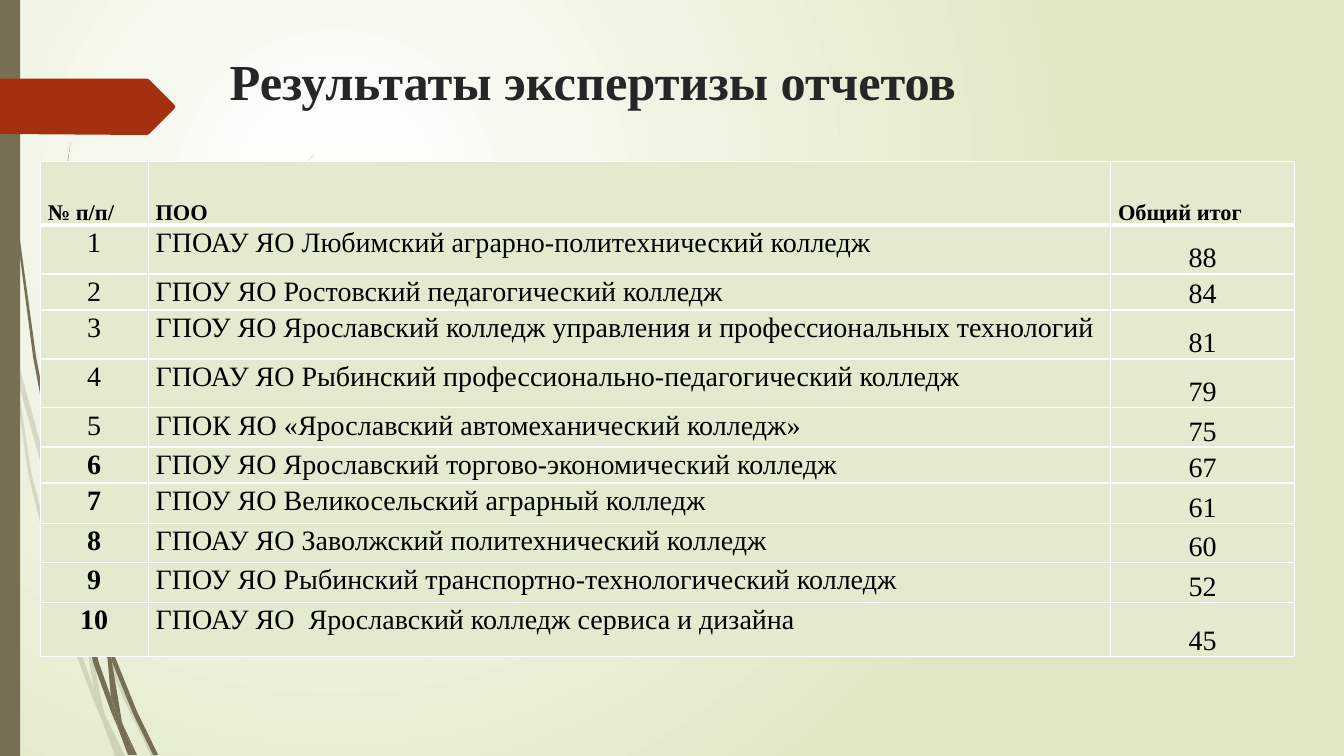
"""Build the slide with the results table of the report review."""
from dataclasses import dataclass
from typing import Optional

from lxml.etree import SubElement
from pptx import Presentation
from pptx.dml.color import RGBColor
from pptx.enum.shapes import MSO_SHAPE
from pptx.enum.text import MSO_ANCHOR, PP_ALIGN
from pptx.oxml.ns import qn
from pptx.util import Pt

FONT = "Times New Roman"
OLIVE = "766F54"
RED = "A53010"
WHITE = "FFFFFF"
BLACK = "000000"
TITLE_GREY = "262626"
PALE_GREEN = "DFE8C4"
CELL_GREEN = "E3EACF"
GRID = 0.72
FAINT = 20


@dataclass(frozen=True)
class Outline:
    points: tuple
    color: str = OLIVE
    opacity: Optional[int] = None


@dataclass(frozen=True)
class Result:
    number: str
    college: str
    total: str
    height: float


@dataclass(frozen=True)
class CellStyle:
    size: float
    bold: bool
    align: PP_ALIGN
    anchor: MSO_ANCHOR


FAINT_BLADES = (
    ((11, 350), (9, 322), (0, 282), (0, 299), (10, 344)),
    ((58, 522), (84, 599), (85, 586), (62, 520), (14, 345), (17, 376)),
    ((92, 607), (88, 596), (88, 610), (123, 694), (150, 750), (155, 750), (127, 692)),
    ((119, 750), (124, 750), (105, 711)),
    ((93, 683), (70, 619), (31, 469), (17, 376), (11, 350), (28, 470), (65, 621),
     (92, 693), (101, 714), (99, 707)),
    ((84, 599), (87, 646), (93, 683), (96, 692), (105, 711), (103, 706), (91, 646),
     (88, 610), (88, 608)),
    ((88, 584), (110, 462), (160, 349), (229, 245), (268, 198), (290, 175), (312, 154),
     (312, 153), (289, 175), (268, 197), (228, 244), (158, 348), (107, 461), (85, 584),
     (85, 586), (88, 596)),
    ((101, 714), (114, 750), (119, 750)),
    ((88, 608), (88, 610), (88, 596), (85, 586), (84, 599)),
    ((96, 692), (93, 683), (99, 707), (101, 714), (119, 750), (105, 711)),
)
SOLID_BLADES = (
    ((7, 110), (17, 233), (33, 355), (56, 477), (57, 481), (55, 457), (55, 453),
     (36, 355), (19, 232), (8, 109), (5, 48), (4, 0), (3, 0), (4, 48)),
    ((88, 592), (106, 645), (106, 633), (106, 631), (93, 590), (60, 472), (64, 505)),
    ((113, 649), (110, 641), (111, 656), (132, 708), (152, 749), (157, 749), (136, 706)),
    ((110, 691), (98, 657), (72, 556), (64, 505), (57, 477), (68, 557), (93, 659),
     (111, 708), (117, 722), (116, 717)),
    ((60, 472), (58, 453), (54, 349), (58, 245), (63, 193), (70, 141), (62, 193),
     (56, 245), (52, 349), (55, 449)),
    ((133, 749), (136, 749), (122, 719)),
    ((57, 477), (64, 505), (60, 472), (55, 449), (55, 453)),
    ((111, 633), (125, 552), (158, 476), (205, 406), (231, 374), (245, 359), (261, 344),
     (260, 344), (245, 358), (231, 373), (204, 405), (156, 474), (122, 551), (106, 631),
     (110, 641)),
    ((117, 722), (127, 749), (131, 749)),
    ((106, 645), (110, 691), (116, 706), (122, 719), (121, 716), (111, 656), (109, 651)),
    ((106, 645), (109, 651), (111, 656), (110, 641), (106, 631), (106, 633)),
    ((110, 691), (116, 717), (117, 722), (130, 749), (133, 749), (122, 719), (116, 706)),
)
ARROW = Outline(((0, 78), (146, 78), (148, 79), (173, 104), (174, 106), (173, 108),
                 (148, 133), (146, 134), (0, 133)), RED)

COLUMN_WIDTHS = (77, 687.5, 131.5)
ROWS = (
    Result("№ п/п/", "ПОО", "Общий итог", 45.5),
    Result("1", "ГПОАУ ЯО Любимский аграрно-политехнический колледж", "88", 35),
    Result("2", "ГПОУ ЯО Ростовский педагогический колледж", "84", 24),
    Result("3", "ГПОУ ЯО Ярославский колледж управления и профессиональных технологий",
           "81", 35),
    Result("4", "ГПОАУ ЯО Рыбинский профессионально-педагогический колледж", "79", 35),
    Result("5", "ГПОК ЯО «Ярославский автомеханический колледж»", "75", 28),
    Result("6", "ГПОУ ЯО Ярославский торгово-экономический колледж", "67", 24),
    Result("7", "ГПОУ ЯО Великосельский аграрный колледж", "61", 29),
    Result("8", "ГПОАУ ЯО Заволжский политехнический колледж", "60", 28),
    Result("9", "ГПОУ ЯО Рыбинский транспортно-технологический колледж", "52", 28.5),
    Result("10", "ГПОАУ ЯО  Ярославский колледж сервиса и дизайна", "45", 38.5),
)


def rgb(color: str) -> RGBColor:
    return RGBColor.from_string(color)


def paint_background(page) -> None:
    fill = page.background.fill
    fill.gradient()
    for stop, color in zip(fill.gradient_stops, (WHITE, PALE_GREEN)):
        stop.color.rgb = rgb(color)
    gradient = page.element.find(".//" + qn("a:gradFill"))
    gradient.remove(gradient.find(qn("a:lin")))
    circle = SubElement(gradient, qn("a:path"), {"path": "circle"})
    SubElement(circle, qn("a:fillToRect"),
               {"l": "50000", "t": "50000", "r": "100000", "b": "100000"})


def paint_shape(shape, color: str) -> None:
    shape.shadow.inherit = False
    shape.fill.solid()
    shape.fill.fore_color.rgb = rgb(color)
    shape.line.fill.background()


def draw_outline(page, outline: Outline) -> None:
    start, *others = [(Pt(x * GRID), Pt(y * GRID)) for x, y in outline.points]
    builder = page.shapes.build_freeform(*start)
    builder.add_line_segments(others, close=True)
    shape = builder.convert_to_shape()
    paint_shape(shape, outline.color)
    if outline.opacity is not None:
        tone = shape.element.spPr.find(qn("a:solidFill")).find(qn("a:srgbClr"))
        SubElement(tone, qn("a:alpha"), {"val": str(outline.opacity * 1000)})


def format_span(para, size: float, bold: bool, color: str) -> None:
    for span in para.runs:
        span.font.name = FONT
        span.font.size = Pt(size)
        span.font.bold = bold
        span.font.color.rgb = rgb(color)


def draw_title(page, text: str) -> None:
    box = page.shapes.add_textbox(Pt(157), Pt(32.4), Pt(684), Pt(82.8))
    box.text_frame.word_wrap = True
    box.text_frame.text = text
    format_span(box.text_frame.paragraphs[0], 36, True, TITLE_GREY)


def add_border(cell, side: str, width: float) -> None:
    line = SubElement(cell._tc.get_or_add_tcPr(), qn("a:" + side), {"w": str(Pt(width))})
    fill = SubElement(line, qn("a:solidFill"))
    SubElement(fill, qn("a:srgbClr"), {"val": WHITE})


def cell_style(row: int, column: int) -> CellStyle:
    if row == 0:
        align = PP_ALIGN.JUSTIFY if column else PP_ALIGN.LEFT
        return CellStyle(16, True, align, MSO_ANCHOR.BOTTOM)
    align = PP_ALIGN.LEFT if column == 1 else PP_ALIGN.CENTER
    anchor = MSO_ANCHOR.BOTTOM if column == 2 else MSO_ANCHOR.TOP
    return CellStyle(20, column == 0 and row > 5, align, anchor)


def fill_cell(cell, text: str, row: int, style: CellStyle) -> None:
    cell.margin_left = cell.margin_right = Pt(5.4)
    cell.margin_top = cell.margin_bottom = Pt(0)
    cell.vertical_anchor = style.anchor
    for side in ("lnL", "lnR", "lnT", "lnB"):
        under_header = (row, side) in ((0, "lnB"), (1, "lnT"))
        add_border(cell, side, 3 if under_header else 1)
    cell.fill.solid()
    cell.fill.fore_color.rgb = rgb(CELL_GREEN)
    cell.text_frame.text = text
    para = cell.text_frame.paragraphs[0]
    para.alignment = style.align
    para.line_spacing = 1.07
    format_span(para, style.size, style.bold, BLACK)


def draw_results(page) -> None:
    height = sum(result.height for result in ROWS)
    table = page.shapes.add_table(len(ROWS), len(COLUMN_WIDTHS), Pt(28.8), Pt(115.2),
                                  Pt(sum(COLUMN_WIDTHS)), Pt(height)).table
    table.first_row = table.horz_banding = False
    for column, width in zip(table.columns, COLUMN_WIDTHS):
        column.width = Pt(width)
    for row, result in enumerate(ROWS):
        table.rows[row].height = Pt(result.height)
        for column, text in enumerate((result.number, result.college, result.total)):
            fill_cell(table.cell(row, column), text, row, cell_style(row, column))


def main() -> None:
    deck = Presentation()
    deck.slide_width, deck.slide_height = Pt(960), Pt(540)
    page = deck.slides.add_slide(deck.slide_layouts[6])
    paint_background(page)
    for points in FAINT_BLADES:
        draw_outline(page, Outline(points, opacity=FAINT))
    for points in SOLID_BLADES:
        draw_outline(page, Outline(points))
    stripe = page.shapes.add_shape(MSO_SHAPE.RECTANGLE, Pt(0), Pt(0), Pt(14.4), Pt(540))
    paint_shape(stripe, OLIVE)
    draw_outline(page, ARROW)
    draw_title(page, "Результаты экспертизы отчетов")
    draw_results(page)
    deck.save("out.pptx")


if __name__ == "__main__":
    main()
